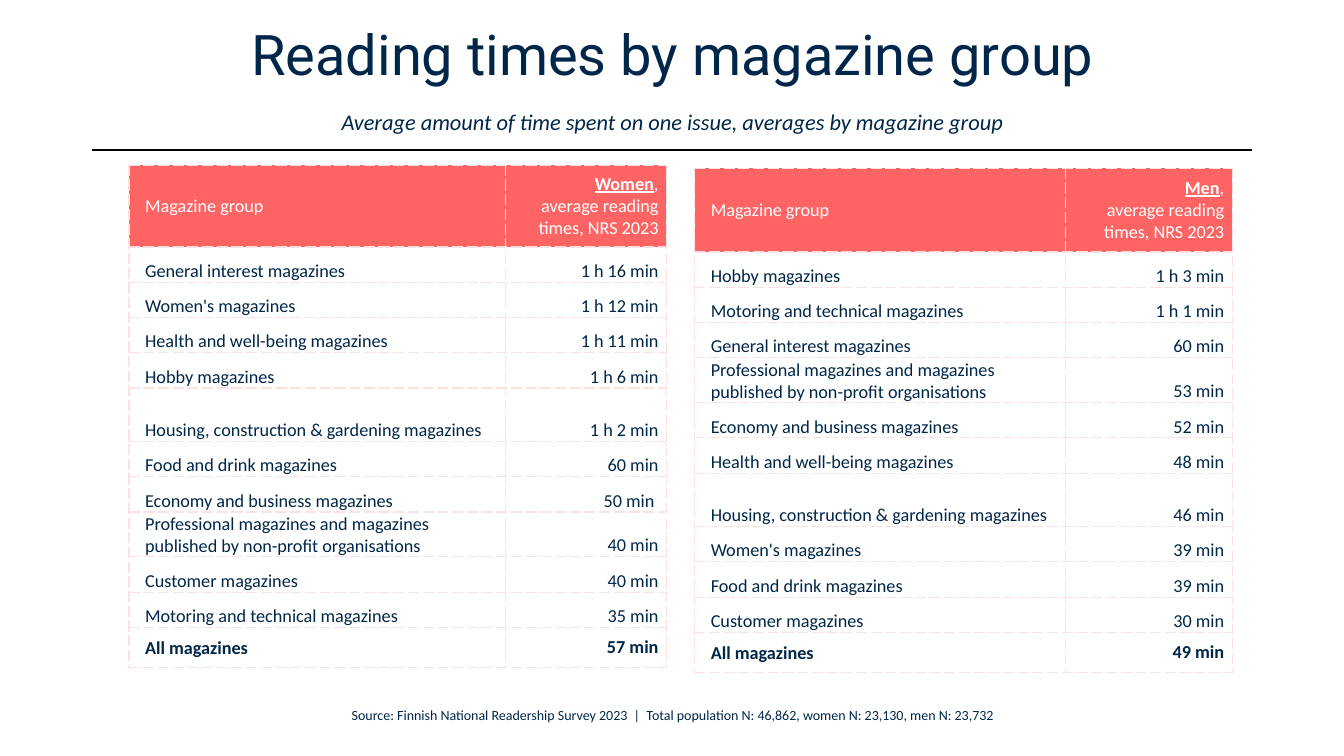
from lxml import etree
from pptx import Presentation
from pptx.dml.color import RGBColor
from pptx.enum.shapes import MSO_CONNECTOR as Connector
from pptx.enum.text import MSO_ANCHOR as Anchor, MSO_AUTO_SIZE as AutoSize, PP_ALIGN as Align
from pptx.oxml import parse_xml
from pptx.oxml.ns import nsdecls, qn
from pptx.util import Inches, Pt

NAVY, CORAL, PINK, WHITE = "002649", "FF6464", "FFE0E0", "FFFFFF"


def color(value):
    return RGBColor.from_string(value)


def add_run(paragraph, text, ink, **formats):
    run = paragraph.add_run()
    run.text = text
    run.font.color.rgb = color(ink)
    for name, value in formats.items():
        setattr(run.font, name, value)


prs = Presentation()
prs.slide_width, prs.slide_height = Inches(13.33), Inches(7.5)
slide = prs.slides.add_slide(prs.slide_layouts[6])

divider = slide.shapes.add_connector(
    Connector.STRAIGHT, Inches(0.91), Inches(1.49), Inches(12.42), Inches(1.49))
divider.line.color.rgb = color("000000")
divider.line.width = Pt(1)
etree.SubElement(divider.element.spPr, qn("a:effectLst"))

title = slide.shapes.add_textbox(Inches(0.92), Inches(0.32), Inches(11.5), Inches(1.07)).text_frame
title.word_wrap = True
title.vertical_anchor = Anchor.MIDDLE
heading = title.paragraphs[0]
heading.alignment = Align.CENTER
heading.line_spacing = Pt(35)
heading.space_after = Pt(18)
add_run(heading, "Reading times by magazine group", NAVY, size=Pt(40), name="Roboto")
heading.add_line_break()
add_run(heading, "Average amount of time spent on one issue, averages by magazine group", NAVY,
        size=Pt(16), name="Calibri", italic=True)

source = slide.shapes.add_textbox(Inches(3.06), Inches(6.96), Inches(7.22), Inches(0.27)).text_frame
source.word_wrap = False
source.auto_size = AutoSize.SHAPE_TO_FIT_TEXT
source.paragraphs[0].alignment = Align.CENTER
add_run(source.paragraphs[0],
        "Source: Finnish National Readership Survey 2023  |  "
        "Total population N: 46,862, women N: 23,130, men N: 23,732",
        NAVY, size=Pt(10), name="Calibri")

HOUSING = "Housing, construction & gardening magazines"
PROFESSIONAL = "Professional magazines and magazines published by non-profit organisations"

women_times = [
    ("General interest magazines", "1 h 16 min"),
    ("Women's magazines", "1 h 12 min"),
    ("Health and well-being magazines", "1 h 11 min"),
    ("Hobby magazines", "1 h 6 min"),
    (HOUSING, "1 h 2 min"),
    ("Food and drink magazines", "60 min"),
    ("Economy and business magazines", "50 min "),
    (PROFESSIONAL, "40 min"),
    ("Customer magazines", "40 min"),
    ("Motoring and technical magazines", "35 min"),
    ("All magazines", "57 min"),
]
men_times = [
    ("Hobby magazines", "1 h 3 min"),
    ("Motoring and technical magazines", "1 h 1 min"),
    ("General interest magazines", "60 min"),
    (PROFESSIONAL, "53 min"),
    ("Economy and business magazines", "52 min"),
    ("Health and well-being magazines", "48 min"),
    (HOUSING, "46 min"),
    ("Women's magazines", "39 min"),
    ("Food and drink magazines", "39 min"),
    ("Customer magazines", "30 min"),
    ("All magazines", "49 min"),
]

HEADER_MARGINS = [(0.16, 0.05, 0.12, 0.05), (0.12, 0.05, 0.08, 0.05)]
BODY_MARGINS = [(0.16, 0.01, 0.01, 0), (0.01, 0.01, 0.08, 0)]
TOTAL_MARGINS = [BODY_MARGINS[0], HEADER_MARGINS[1]]
cell_format = {"size": Pt(13), "name": "Calibri"}

for readers, times, left, top, header_height, widths in [
    ("Women", women_times, 1.28, 1.64, 0.81, (3.73, 1.6)),
    ("Men", men_times, 6.89, 1.67, 0.83, (3.68, 1.65)),
]:
    heights = [header_height] + [0.53 if group == HOUSING else 0.35 for group, _ in times]
    heights[-1] = 0.4
    table = slide.shapes.add_table(
        len(heights), 2, Inches(left), Inches(top),
        Inches(sum(widths)), Inches(sum(heights))).table
    table.first_row = table.horz_banding = False
    for column, width in zip(table.columns, widths):
        column.width = Inches(width)

    for r, (height, texts) in enumerate(zip(heights, [("Magazine group", readers)] + times)):
        table.rows[r].height = Inches(height)
        header, total = r == 0, r == len(times)
        margins = HEADER_MARGINS if header else TOTAL_MARGINS if total else BODY_MARGINS
        for c, text in enumerate(texts):
            cell = table.cell(r, c)
            cell.vertical_anchor = Anchor.MIDDLE if header or total else Anchor.BOTTOM
            for side, margin in zip(("left", "top", "right", "bottom"), margins[c]):
                setattr(cell, f"margin_{side}", Inches(margin))
            borders = cell._tc.get_or_add_tcPr()
            for edge in "LRTB":
                borders.append(parse_xml(
                    f'<a:ln{edge} {nsdecls("a")} w="12700"><a:solidFill><a:srgbClr val="{PINK}"/>'
                    f'</a:solidFill><a:prstDash val="sysDash"/></a:ln{edge}>'))
            if header:
                cell.fill.solid()
                cell.fill.fore_color.rgb = color(CORAL)
            else:
                cell.fill.background()

            entry = cell.text_frame.paragraphs[0]
            entry.alignment = Align.RIGHT if c else Align.LEFT
            if header and c:
                add_run(entry, text, WHITE, bold=True, underline=True, **cell_format)
                add_run(entry, ",", WHITE, **cell_format)
                measure = cell.text_frame.add_paragraph()
                measure.alignment = Align.RIGHT
                add_run(measure, "average reading times, NRS 2023", WHITE, **cell_format)
            else:
                add_run(entry, text, WHITE if header else NAVY, bold=total, **cell_format)

prs.save("out.pptx")
